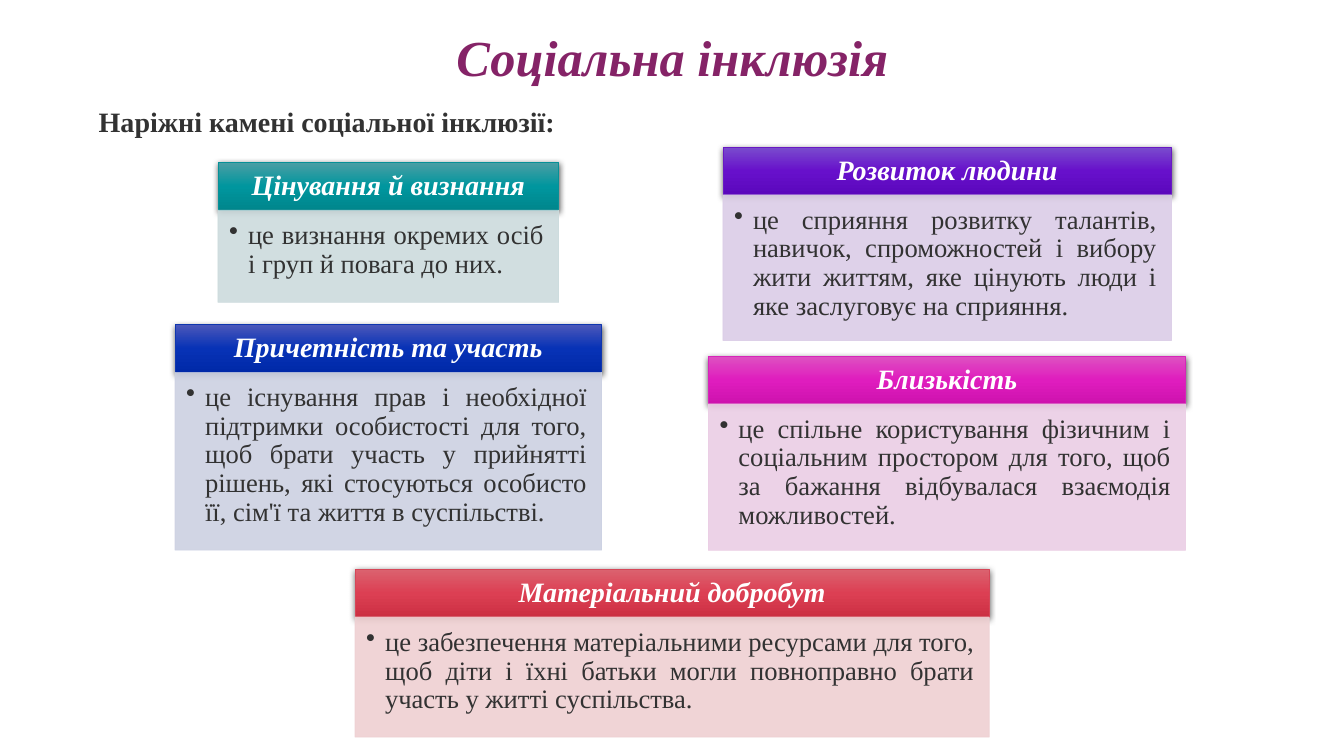
from copy import deepcopy

from lxml.etree import SubElement
from pptx import Presentation
from pptx.dml.color import RGBColor
from pptx.enum.shapes import MSO_SHAPE
from pptx.enum.text import MSO_ANCHOR as Anchor, PP_ALIGN as Align
from pptx.oxml.ns import qn
from pptx.util import Pt

DARK, WHITE, PLUM = "323232", "FFFFFF", "852367"
HEADER_HEIGHT = 34.2

# Heading, text, (left, top, width, body height), gradient, border, body colour
CARDS = [
    ("Цінування й визнання",
     "це визнання окремих осіб і груп й повага до них.",
     (155.7, 116, 243.3, 65.8), ("4B9EA4", "00969E", "00868C"), "079097", "CCDBDD"),
    ("Причетність та участь",
     "це існування прав і необхідної підтримки особистості для того, щоб брати участь "
     "у прийнятті рішень, які стосуються особисто її, сім'ї та життя в суспільстві.",
     (125, 231.8, 304.7, 127), ("4C58BA", "0732B6", "0029A8"), "0F36AE", "CCD1E2"),
    ("Розвиток людини",
     "це сприяння розвитку талантів, навичок, спроможностей і вибору жити життям, "
     "яке цінують люди і яке заслуговує на сприяння.",
     (516.4, 105, 320.4, 104), ("7A4DCD", "6710CB", "5B07BC"), "6819C3", "DBCDE7"),
    ("Близькість",
     "це спільне користування фізичним і соціальним простором для того, "
     "щоб за бажання відбувалася взаємодія можливостей.",
     (506, 254.4, 340.8, 104.6), ("DE51C1", "DF1DBE", "CE12AE"), "D626B8", "EBCEE5"),
    ("Матеріальний добробут",
     "це забезпечення матеріальними ресурсами для того, щоб діти і їхні батьки "
     "могли повноправно брати участь у житті суспільства.",
     (253.6, 406.6, 453, 85.7), ("DB626F", "DC3F53", "CC3043"), "D54658", "EFD0D2"),
]


def color(value):
    return RGBColor.from_string(value)


def set_alpha(element, percent):
    SubElement(element, qn("a:alpha"), val=str(percent * 1000))


def write_text(shape, text, size=20, fill=DARK, bold=False, italic=False, align=Align.LEFT,
               spacing=0.9, anchor=Anchor.TOP, insets=(7.2, 3.6, 7.2, 3.6),
               margin=0, indent=0, bullet=None):
    frame = shape.text_frame
    frame.word_wrap = True
    frame.vertical_anchor = anchor
    frame.margin_left, frame.margin_top, frame.margin_right, frame.margin_bottom = map(Pt, insets)
    paragraph = frame.paragraphs[0]
    paragraph.text = text
    paragraph.alignment = align
    paragraph.line_spacing = spacing
    properties = paragraph._p.get_or_add_pPr()
    properties.set("marL", str(Pt(margin)))
    properties.set("indent", str(Pt(indent)))
    if bullet:
        SubElement(properties, qn("a:buChar"), char=bullet)
    font = paragraph.runs[0].font
    font.name, font.size, font.bold, font.italic = "Times New Roman", Pt(size), bold, italic
    font.color.rgb = color(fill)


class SlideBuilder:
    def __init__(self, slide):
        self.slide = slide

    def text_box(self, left, top, width, height, text, **text_format):
        box = self.slide.shapes.add_textbox(Pt(left), Pt(top), Pt(width), Pt(height))
        write_text(box, text, **text_format)

    def rectangle(self, left, top, width, height, border):
        shape = self.slide.shapes.add_shape(
            MSO_SHAPE.RECTANGLE, Pt(left), Pt(top), Pt(width), Pt(height))
        shape.shadow.inherit = False
        shape.line.color.rgb = color(border)
        shape.line.width = Pt(0.5)
        return shape

    def header(self, left, top, width, text, gradient, border):
        shape = self.rectangle(left, top, width, HEADER_HEIGHT, border)
        # Three-stop vertical gradient
        shape.fill.gradient()
        shape.fill.gradient_angle = 270
        stop_list = shape._element.spPr.find(".//" + qn("a:gsLst"))
        stop_list.append(deepcopy(stop_list[0]))
        for stop, position, value in zip(shape.fill.gradient_stops, (0, 0.5, 1), gradient):
            stop.position = position
            stop.color.rgb = color(value)
        # Soft shadow below
        effects = shape._element.spPr.find(qn("a:effectLst"))
        shadow = SubElement(effects, qn("a:outerShdw"), blurRad=str(Pt(4.5)),
                            dist=str(Pt(1.5)), dir="5400000", rotWithShape="0")
        set_alpha(SubElement(shadow, qn("a:srgbClr"), val="000000"), 63)
        write_text(shape, text, fill=WHITE, bold=True, italic=True, align=Align.CENTER,
                   anchor=Anchor.MIDDLE, insets=(11.4, 6.5, 11.4, 6.5))

    def body(self, left, top, width, height, text, fill):
        shape = self.rectangle(left, top, width, height, fill)
        shape.fill.solid()
        shape.fill.fore_color.rgb = color(fill)
        for element in shape._element.spPr.iter(qn("a:srgbClr")):
            set_alpha(element, 90)
        write_text(shape, text, size=19, align=Align.JUSTIFY, insets=(8, 8, 10.7, 12),
                   margin=13.5, indent=-13.5, bullet="•")

    def card(self, heading, text, place, gradient, border, fill):
        left, top, width, body_height = place
        self.header(left, top, width, heading, gradient, border)
        self.body(left, top + HEADER_HEIGHT, width, body_height, text, fill)


def main():
    presentation = Presentation()
    presentation.slide_width, presentation.slide_height = Pt(960), Pt(540)
    builder = SlideBuilder(presentation.slides.add_slide(presentation.slide_layouts[6]))

    # Title and subtitle
    builder.text_box(34.6, 20.2, 891.4, 46.8, "Соціальна інклюзія", size=36, fill=PLUM,
                     bold=True, italic=True, align=Align.CENTER)
    builder.text_box(34.6, 67.7, 891.4, 62.6, "Наріжні камені соціальної інклюзії:",
                     bold=True, align=Align.JUSTIFY, spacing=1.14, indent=28.8)

    # Cornerstone cards
    for card in CARDS:
        builder.card(*card)

    presentation.save("out.pptx")


if __name__ == "__main__":
    main()
